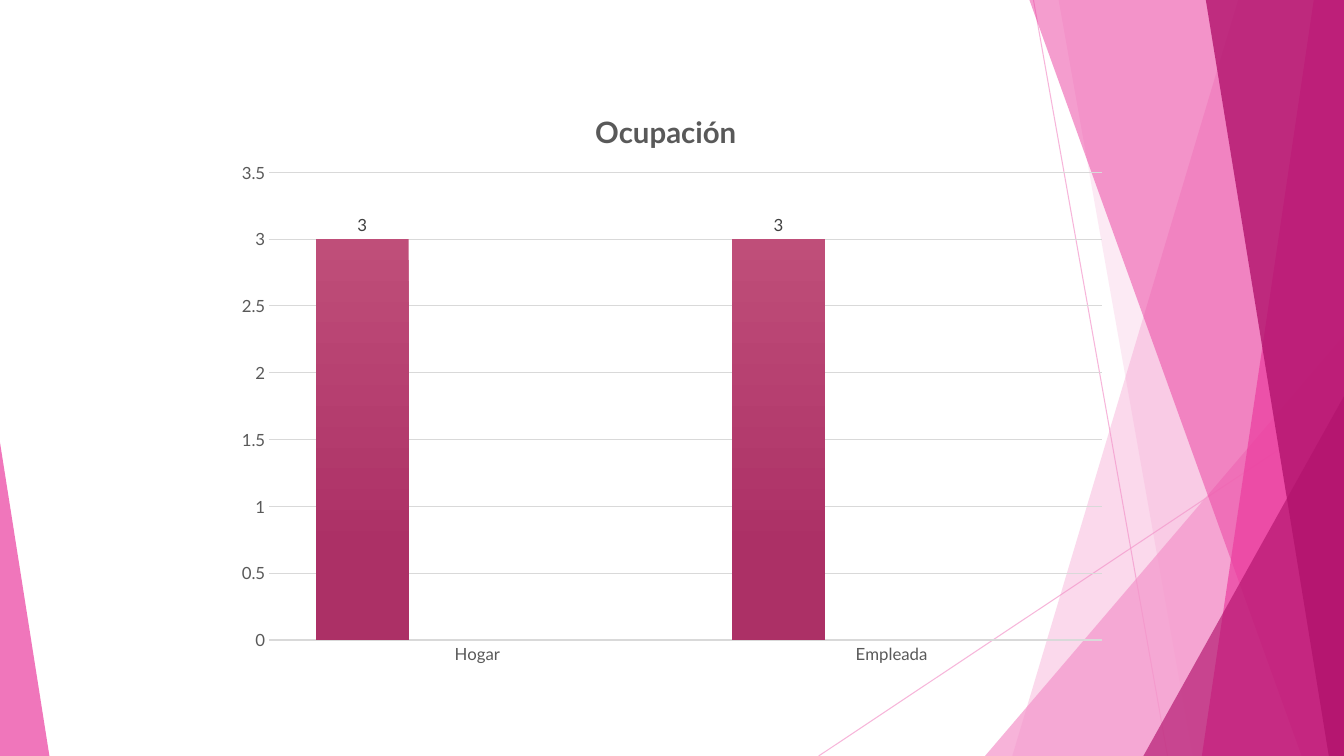
from lxml.etree import SubElement
from pptx import Presentation
from pptx.chart.data import CategoryChartData
from pptx.dml.color import RGBColor
from pptx.enum.chart import XL_CHART_TYPE, XL_LABEL_POSITION, XL_TICK_MARK
from pptx.enum.shapes import MSO_CONNECTOR, MSO_SHAPE
from pptx.oxml import parse_xml
from pptx.oxml.ns import nsdecls, qn
from pptx.util import Inches, Pt

WIDTH, HEIGHT = 13.33, 7.5
FONT = "Lato"
COLORS = {
    "light": "F496CB", "pink": "EB3D9F", "dark": "B2136D",
    "text": "595959", "label": "404040", "grid": "D9D9D9",
}

TITLE = "Ocupación"
CATEGORIES = ["Hogar", "Empleada "]
SERIES = [  # name, values, gradient from top to bottom
    ("Series 1", (3, 3), ("BF4E79", "AC3066")),
    ("Series 2", (None, None), ("F38742", "E17313")),
    ("Series 3", (None, None), ("BF88E1", "AE6DD6")),
]
CHART_BOX = (2.22, 0.79, 8.89, 5.93)
TITLE_CORNER = (5.85, 1.04)
PLOT_BOX = (2.67, 1.71, 8.26, 4.64)

RAYS = [((10.25, 0), (11.58, HEIGHT)), ((WIDTH, 4.03), (8.12, HEIGHT))]
# Panels reach the right edge: x at the top, x at the bottom, color, opacity
# Triangles stand on the bottom edge: left, top, width, apex, color, opacity
FACETS = [
    ("panel", (12.28, 10.04), "light", 36),
    ("panel", (10.5, 11.83), "light", 20),
    ("triangle", (9.77, 3.33, 3.56, 1), "light", 72),
    ("panel", (10.21, 12.91), "pink", 50),
    ("panel", (13.03, 11.92), "pink", 70),
    ("panel", (11.96, 13.18), "dark", 80),
    ("triangle", (11.34, 3.93, 1.99, 1), "dark", 66),
    ("triangle", (0, 4.39, 0.49, 0), "pink", 70),
]


def rgb(name):
    return RGBColor.from_string(COLORS[name])


def set_opacity(shape_properties, percent):
    for color in shape_properties.iter(qn("a:srgbClr")):
        SubElement(color, qn("a:alpha")).set("val", str(percent * 1000))


def add_ray(shapes, start, end):
    ray = shapes.add_connector(
        MSO_CONNECTOR.STRAIGHT, *(Inches(value) for value in start + end))
    ray.line.color.rgb = rgb("light")
    ray.line.width = Pt(0.75)
    properties = ray.element.spPr
    set_opacity(properties, 70)
    SubElement(properties, qn("a:effectLst"))


def add_panel(shapes, top_x, bottom_x):
    builder = shapes.build_freeform(Inches(top_x), 0)
    corners = [(WIDTH, 0), (WIDTH, HEIGHT), (bottom_x, HEIGHT)]
    builder.add_line_segments([(Inches(x), Inches(y)) for x, y in corners])
    return builder.convert_to_shape()


def add_triangle(shapes, left, top, width, apex):
    triangle = shapes.add_shape(
        MSO_SHAPE.ISOSCELES_TRIANGLE,
        Inches(left), Inches(top), Inches(width), Inches(HEIGHT - top))
    triangle.adjustments[0] = apex
    return triangle


def add_facet(shapes, kind, geometry, color, opacity):
    add = add_panel if kind == "panel" else add_triangle
    facet = add(shapes, *geometry)
    facet.shadow.inherit = False
    facet.fill.solid()
    facet.fill.fore_color.rgb = rgb(color)
    facet.line.fill.background()
    set_opacity(facet.element.spPr, opacity)


def style_font(font, size, color, bold=False):
    font.name = FONT
    font.size = Pt(size)
    font.bold = bold
    font.color.rgb = rgb(color)


def make_layout(box, inner=False):
    """Return a manual chart layout for a corner or box given in slide inches."""
    left, top, width, height = CHART_BOX
    fractions = [(box[0] - left) / width, (box[1] - top) / height]
    fractions += [size / full for size, full in zip(box[2:], (width, height))]
    target = '<c:layoutTarget val="inner"/>' if inner else ""
    modes = '<c:xMode val="edge"/><c:yMode val="edge"/>'
    values = "".join(f'<c:{name} val="{value:.4f}"/>'
                     for name, value in zip("xywh", fractions))
    return parse_xml(f'<c:layout {nsdecls("c")}><c:manualLayout>'
                     f'{target}{modes}{values}</c:manualLayout></c:layout>')


def replace_layout(parent, layout, index):
    for old in parent.findall(qn("c:layout")):
        parent.remove(old)
    parent.insert(index, layout)


def style_axes(chart):
    for axis in (chart.category_axis, chart.value_axis):
        axis.major_tick_mark = axis.minor_tick_mark = XL_TICK_MARK.NONE
        style_font(axis.tick_labels.font, 12, "text")
    category_line = chart.category_axis.format.line
    category_line.color.rgb = rgb("grid")
    category_line.width = Pt(1)
    value_axis = chart.value_axis
    value_axis.minimum_scale, value_axis.maximum_scale = 0, 3.5
    value_axis.major_unit = 0.5
    value_axis.format.line.fill.background()
    grid_line = value_axis.major_gridlines.format.line
    grid_line.color.rgb = rgb("grid")
    grid_line.width = Pt(0.75)


def style_series(series, gradient):
    fill = series.format.fill
    fill.gradient()
    fill.gradient_angle = 270
    for stop, position, color in zip(fill.gradient_stops, (0, 0.78), gradient):
        stop.position = position
        stop.color.rgb = RGBColor.from_string(color)
    labels = series.data_labels
    labels.show_value = True
    labels.position = XL_LABEL_POSITION.OUTSIDE_END
    style_font(labels.font, 12, "label")


def add_occupation_chart(shapes):
    data = CategoryChartData()
    data.categories = CATEGORIES
    for name, values, _ in SERIES:
        data.add_series(name, values)
    chart = shapes.add_chart(
        XL_CHART_TYPE.COLUMN_CLUSTERED,
        *(Inches(value) for value in CHART_BOX), data).chart
    chart.has_legend = False
    chart.font.name = FONT
    chart.font.size = Pt(10)
    title_frame = chart.chart_title.text_frame
    title_frame.text = TITLE
    style_font(title_frame.paragraphs[0].runs[0].font, 21, "text", bold=True)
    chart.chart_title.include_in_layout = False
    style_axes(chart)
    plot = chart.plots[0]
    plot.gap_width, plot.overlap = 100, -24
    plot.vary_by_categories = False
    for series, (_, _, gradient) in zip(plot.series, SERIES):
        style_series(series, gradient)
    chart_element = chart.element.find(qn("c:chart"))
    replace_layout(chart_element.find(qn("c:title")), make_layout(TITLE_CORNER), 1)
    replace_layout(chart_element.find(qn("c:plotArea")),
                   make_layout(PLOT_BOX, inner=True), 0)


def main():
    presentation = Presentation()
    presentation.slide_width = Inches(WIDTH)
    presentation.slide_height = Inches(HEIGHT)
    slide = presentation.slides.add_slide(presentation.slide_layouts[6])
    for start, end in RAYS:
        add_ray(slide.shapes, start, end)
    for facet in FACETS:
        add_facet(slide.shapes, *facet)
    add_occupation_chart(slide.shapes)
    presentation.save("out.pptx")


if __name__ == "__main__":
    main()
